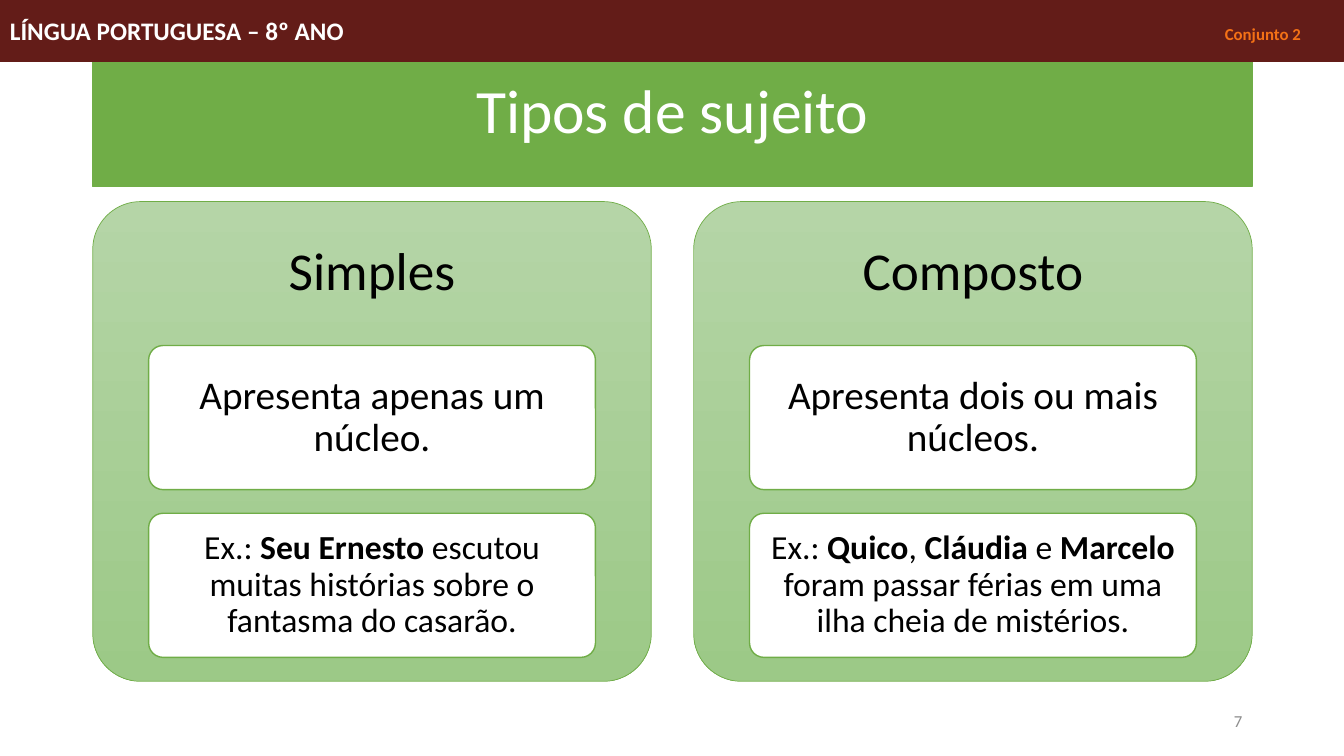
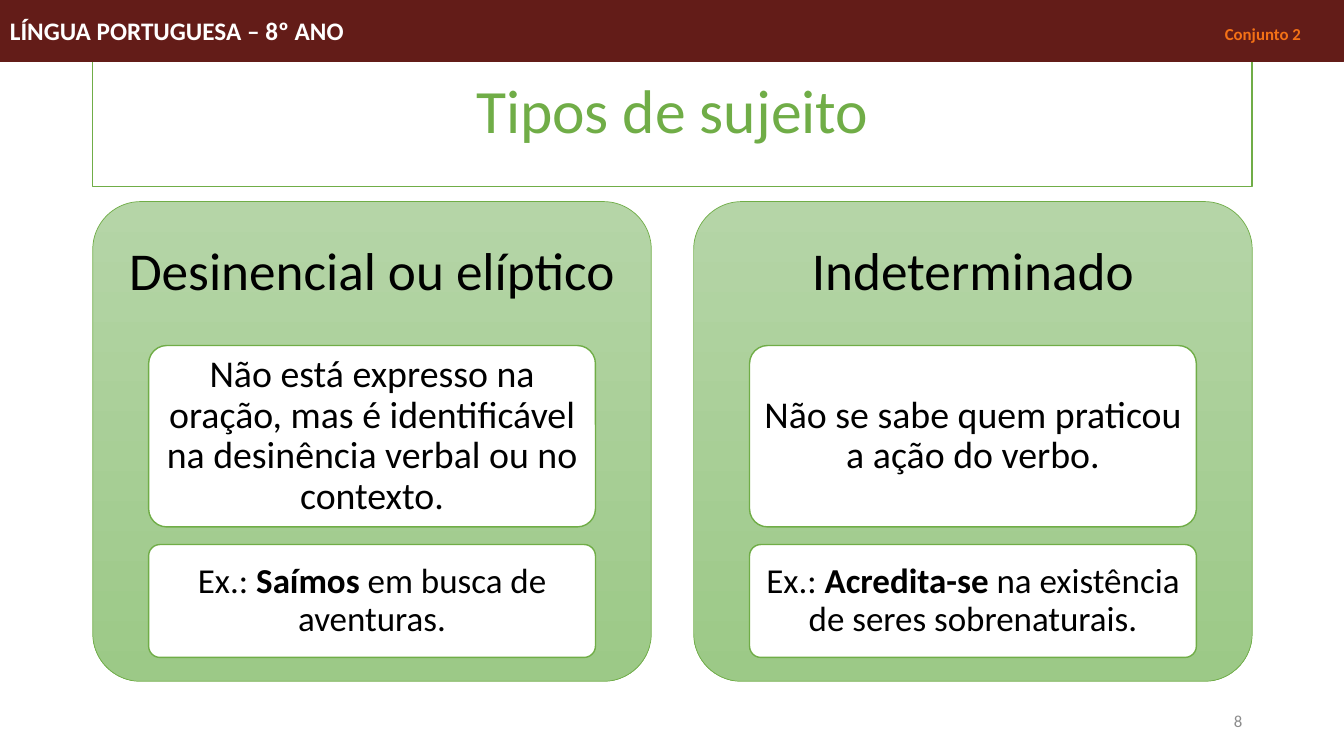
from pptx import Presentation
from pptx.dml.color import RGBColor
from pptx.enum.shapes import MSO_SHAPE
from pptx.enum.text import MSO_ANCHOR, PP_ALIGN
from pptx.oxml.ns import qn
from pptx.util import Inches, Pt
from lxml import etree

RECT, ROUNDED = MSO_SHAPE.RECTANGLE, MSO_SHAPE.ROUNDED_RECTANGLE
LEFT, CENTER, RIGHT = PP_ALIGN.LEFT, PP_ALIGN.CENTER, PP_ALIGN.RIGHT
MIDDLE = MSO_ANCHOR.MIDDLE

FONT = "Calibri"
GREEN, WHITE, BLACK = "70AD47", "FFFFFF", "000000"
PANEL_TOP, PANEL_BOTTOM = "B5D5A7", "9CC987"
MAROON, ORANGE, GREY = "631C18", "F47116", "8C8C8C"

PAGE_WIDTH, PAGE_HEIGHT = 13.33, 7.5
MARGIN, CONTENT_WIDTH = 0.92, 11.5
PANEL_Y, PANEL_WIDTH, PANEL_HEIGHT = 2, 5.54, 4.76
HEADING_SHARE, CARDS_SHARE, CARD_WIDTH_SHARE = 0.3, 0.65, 0.8

# Within an example, every second piece is bold.
SLIDES = [
    {
        "number": "7", "title_fill": GREEN, "title_color": WHITE,
        "card_heights": (1.43, 1.43), "card_sizes": (28, 24),
        "panels": [
            ("Simples", ["Apresenta apenas um núcleo."],
             ["Ex.: ", "Seu Ernesto",
              " escutou muitas histórias sobre o fantasma do casarão."]),
            ("Composto", ["Apresenta dois ou mais núcleos."],
             ["Ex.: ", "Quico", ", ", "Cláudia", " e ", "Marcelo",
              " foram passar férias em uma ilha cheia de mistérios."]),
        ],
    },
    {
        "number": "8", "title_fill": WHITE, "title_color": GREEN,
        "card_heights": (1.8, 1.12), "card_sizes": (27, 25),
        "panels": [
            ("Desinencial ou elíptico",
             ["Não está expresso na oração, mas é identificável na "
              "desinência verbal ou no contexto."],
             ["Ex.: ", "Saímos", " em busca de aventuras."]),
            ("Indeterminado",
             ["Não se sabe quem praticou a ação do verbo."],
             ["Ex.: ", "Acredita-se", " na existência de seres sobrenaturais."]),
        ],
    },
]


def rgb(value):
    return RGBColor.from_string(value)


def add_box(page, kind, box, fill, line, line_width):
    """Add an outlined shape; fill None leaves the fill to the caller."""
    shape = page.shapes.add_shape(kind, *map(Inches, box))
    shape.shadow.inherit = False
    if kind == ROUNDED:
        shape.adjustments[0] = 0.1
    if fill:
        shape.fill.solid()
        shape.fill.fore_color.rgb = rgb(fill)
    shape.line.color.rgb = rgb(line)
    shape.line.width = Pt(line_width)
    return shape


def add_span(para, text, size, color, bold=False):
    span = para.add_run()
    span.text = text
    span.font.name = FONT
    span.font.size = Pt(size)
    span.font.bold = bold
    span.font.color.rgb = rgb(color)


def start_text(shape, align, insets=(0.1, 0.05), spacing=None):
    """Prepare the text frame and return its first paragraph."""
    frame = shape.text_frame
    frame.word_wrap = True
    frame.vertical_anchor = MIDDLE
    frame.margin_left = frame.margin_right = Inches(insets[0])
    frame.margin_top = frame.margin_bottom = Inches(insets[1])
    para = frame.paragraphs[0]
    para.alignment = align
    if spacing:
        para.line_spacing = spacing
    return para


def add_title(page, box, fill, color):
    shape = add_box(page, RECT, box, fill, GREEN, 1)
    add_span(start_text(shape, CENTER, spacing=0.9), "Tipos de sujeito", 44, color)


def add_card(page, box, pieces, size):
    shape = add_box(page, ROUNDED, box, WHITE, GREEN, 1)
    para = start_text(shape, CENTER, (0.07, 0.05), 0.9)
    for index, piece in enumerate(pieces):
        add_span(para, piece, size, BLACK, bold=index % 2 == 1)


def add_panel(page, box, heading, cards, heights, sizes):
    """Draw a gradient panel with a heading and a stack of cards."""
    left, top, width, height = box
    panel = add_box(page, ROUNDED, box, None, GREEN, 0.5)
    panel.fill.gradient()
    panel.fill.gradient_angle = 270
    for stop, color in zip(panel.fill.gradient_stops, (PANEL_TOP, PANEL_BOTTOM)):
        stop.color.rgb = rgb(color)

    heading_height = height * HEADING_SHARE
    heading_box = page.shapes.add_textbox(
        *map(Inches, (left, top, width, heading_height)))
    para = start_text(heading_box, CENTER, (0.16, 0.16), 0.9)
    add_span(para, heading, 38, BLACK)

    card_width = width * CARD_WIDTH_SHARE
    card_left = left + (width - card_width) / 2
    gap = (height * CARDS_SHARE - sum(heights)) / (len(heights) - 1)
    y = top + heading_height
    for pieces, card_height, size in zip(cards, heights, sizes):
        add_card(page, (card_left, y, card_width, card_height), pieces, size)
        y += card_height + gap


def add_header(page, box):
    band = add_box(page, RECT, box, MAROON, MAROON, 0.75)
    para = start_text(band, LEFT)
    add_span(para, "LÍNGUA PORTUGUESA – 8º ANO\t", 18, WHITE, bold=True)
    add_span(para, "Conjunto 2", 12, ORANGE, bold=True)
    tabs = etree.SubElement(para._p.get_or_add_pPr(), qn("a:tabLst"))
    etree.SubElement(tabs, qn("a:tab"), pos=str(Inches(box[2] - 1.28)), algn="l")


def add_page_number(page, box, number):
    shape = page.shapes.add_textbox(*map(Inches, box))
    add_span(start_text(shape, RIGHT), number, 12, GREY)


def add_types_slide(deck, content):
    page = deck.slides.add_slide(deck.slide_layouts[6])
    step = CONTENT_WIDTH - PANEL_WIDTH
    for index, (heading, *cards) in enumerate(content["panels"]):
        box = (MARGIN + index * step, PANEL_Y, PANEL_WIDTH, PANEL_HEIGHT)
        add_panel(page, box, heading, cards,
                  content["card_heights"], content["card_sizes"])
    add_title(page, (MARGIN, 0.4, CONTENT_WIDTH, 1.45),
              content["title_fill"], content["title_color"])
    add_page_number(page, (MARGIN + CONTENT_WIDTH - 3, 6.95, 3, 0.4),
                    content["number"])
    add_header(page, (0, 0, PAGE_WIDTH, 0.61))


def main():
    deck = Presentation()
    deck.slide_width = Inches(PAGE_WIDTH)
    deck.slide_height = Inches(PAGE_HEIGHT)
    for content in SLIDES:
        add_types_slide(deck, content)
    deck.save("out.pptx")


if __name__ == "__main__":
    main()
